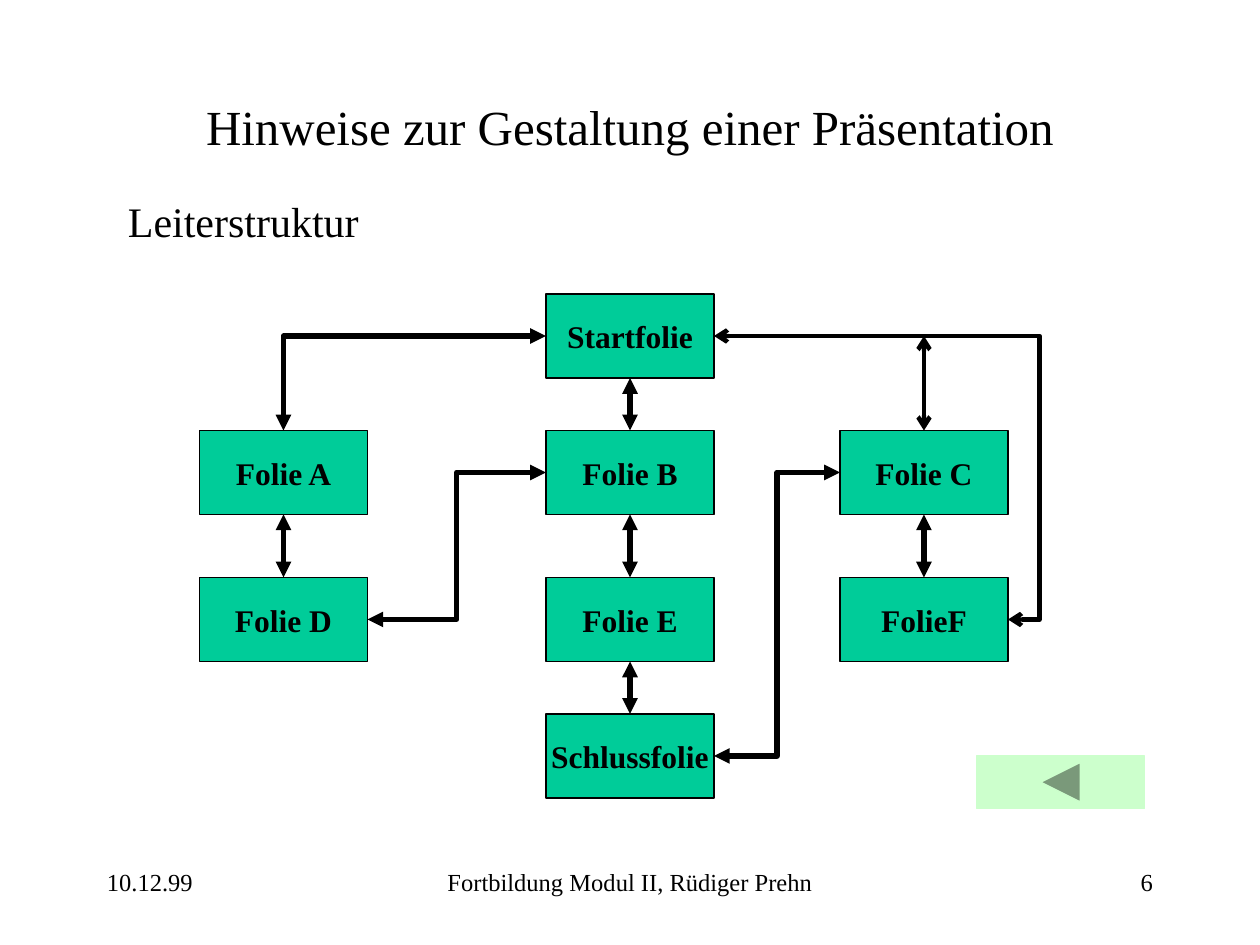
"""Build a slide that shows a ladder structure of linked presentation pages."""
import pptx
import pptx.util
import pptx.dml.color
import pptx.enum.shapes
import pptx.enum.text
import pptx.oxml
import pptx.oxml.ns

HUES = {"ink": "000000", "box": "00CC99", "key": "CCFFCC"}
FONT = "Times New Roman"
SHAPE = pptx.enum.shapes.MSO_SHAPE
LINK = pptx.enum.shapes.MSO_CONNECTOR
ALIGN = pptx.enum.text.PP_ALIGN
ANCHOR = pptx.enum.text.MSO_ANCHOR
TOP, LEFT, BOTTOM, RIGHT = range(4)

deck = pptx.Presentation()
deck.slide_width = pptx.util.Inches(10)
deck.slide_height = pptx.util.Inches(7.5)
unit = deck.slide_width // 120
slide = deck.slides.add_slide(deck.slide_layouts[5])
shapes = slide.shapes


def write(shape, text, size, align, anchor, bold=False, wrap=True):
    frame = shape.text_frame
    frame.text = text
    frame.word_wrap = wrap
    frame.auto_size = pptx.enum.text.MSO_AUTO_SIZE.NONE
    frame.vertical_anchor = anchor
    para = frame.paragraphs[0]
    para.alignment = align
    font = para.runs[0].font
    font.name, font.size, font.bold = FONT, pptx.util.Pt(size), bold
    font.color.rgb = pptx.dml.color.RGBColor.from_string(HUES["ink"])


def paint(shape, fill, edge):
    shape.shadow.inherit = False
    shape.fill.solid()
    shape.fill.fore_color.rgb = pptx.dml.color.RGBColor.from_string(HUES[fill])
    shape.line.color.rgb = pptx.dml.color.RGBColor.from_string(HUES[edge])
    shape.line.width = pptx.util.Pt(0.75)


for text, x, wide, align in [
    ("10.12.99", 9, 25, ALIGN.LEFT),
    ("Fortbildung Modul II, Rüdiger Prehn", 41, 38, ALIGN.CENTER),
    ("6", 86, 25, ALIGN.RIGHT),
]:
    foot = shapes.add_textbox(x * unit, 82 * unit, wide * unit, 6 * unit)
    write(foot, text, 14, align, ANCHOR.TOP)

title = shapes.title
title.left, title.top, title.width, title.height = (n * unit for n in (9, 8, 102, 8))
write(title, "Hinweise zur Gestaltung einer Präsentation", 28, ALIGN.CENTER, ANCHOR.MIDDLE)

topic = shapes.add_textbox(11 * unit, 18 * unit, 98 * unit, 6 * unit)
write(topic, "Leiterstruktur", 24, ALIGN.LEFT, ANCHOR.TOP)

cols, rows = (19, 52, 80), (28, 41, 55, 68)
wide, high = 16, 8
boxes = {}
for name, col, row in [
    ("Folie B", 1, 1), ("Startfolie", 1, 0), ("Folie A", 0, 1), ("Folie E", 1, 2),
    ("Schlussfolie", 1, 3), ("Folie D", 0, 2), ("FolieF", 2, 2), ("Folie C", 2, 1),
]:
    box = shapes.add_shape(
        SHAPE.RECTANGLE, cols[col] * unit, rows[row] * unit, wide * unit, high * unit)
    paint(box, "box", "ink")
    write(box, name, 18, ALIGN.CENTER, ANCHOR.MIDDLE, bold=True, wrap=False)
    boxes[name] = box

key = shapes.add_shape(
    SHAPE.ACTION_BUTTON_BACK_OR_PREVIOUS, 93 * unit, 72 * unit, wide * unit, 5 * unit)
paint(key, "key", "key")

mid = cols[2] + wide // 2
for start, out, end, into, form, bend in [
    ("Startfolie", BOTTOM, "Folie B", TOP, "line", None),
    ("Startfolie", LEFT, "Folie A", TOP, "bentConnector2", None),
    ("Folie A", BOTTOM, "Folie D", TOP, "line", None),
    ("Folie B", BOTTOM, "Folie E", TOP, "line", None),
    ("Folie C", BOTTOM, "FolieF", TOP, "line", None),
    ("Folie D", RIGHT, "Folie B", LEFT, "bentConnector3", 50000),
    ("Folie E", BOTTOM, "Schlussfolie", TOP, "line", None),
    ("Schlussfolie", RIGHT, "Folie C", LEFT, "bentConnector3", 50000),
    (None, None, "Folie C", TOP, "line", None),
    ("Startfolie", RIGHT, "FolieF", RIGHT, "bentConnector3", 110700),
]:
    kind = LINK.STRAIGHT if form == "line" else LINK.ELBOW
    link = shapes.add_connector(
        kind, mid * unit, (rows[0] + high // 2) * unit, mid * unit, rows[1] * unit)
    if start:
        link.begin_connect(boxes[start], out)
    link.end_connect(boxes[end], into)
    thin = start is None or out == into
    link.line.width = pptx.util.Pt(2.5 if thin else 3)
    link.line.color.rgb = pptx.dml.color.RGBColor.from_string(HUES["ink"])
    props = link.line._get_or_add_ln()
    for tip in ("a:headEnd", "a:tailEnd"):
        mark = pptx.oxml.xmlchemy.OxmlElement(tip)
        mark.set("type", "arrow" if thin else "triangle")
        props.append(mark)
    tree = link._element.spPr
    tree.append(pptx.oxml.xmlchemy.OxmlElement("a:effectLst"))
    geom = tree.find(pptx.oxml.ns.qn("a:prstGeom"))
    geom.set("prst", form)
    if bend:
        guide = pptx.oxml.xmlchemy.OxmlElement("a:gd")
        guide.set("name", "adj1")
        guide.set("fmla", f"val {bend}")
        geom.find(pptx.oxml.ns.qn("a:avLst")).append(guide)

deck.save("out.pptx")
